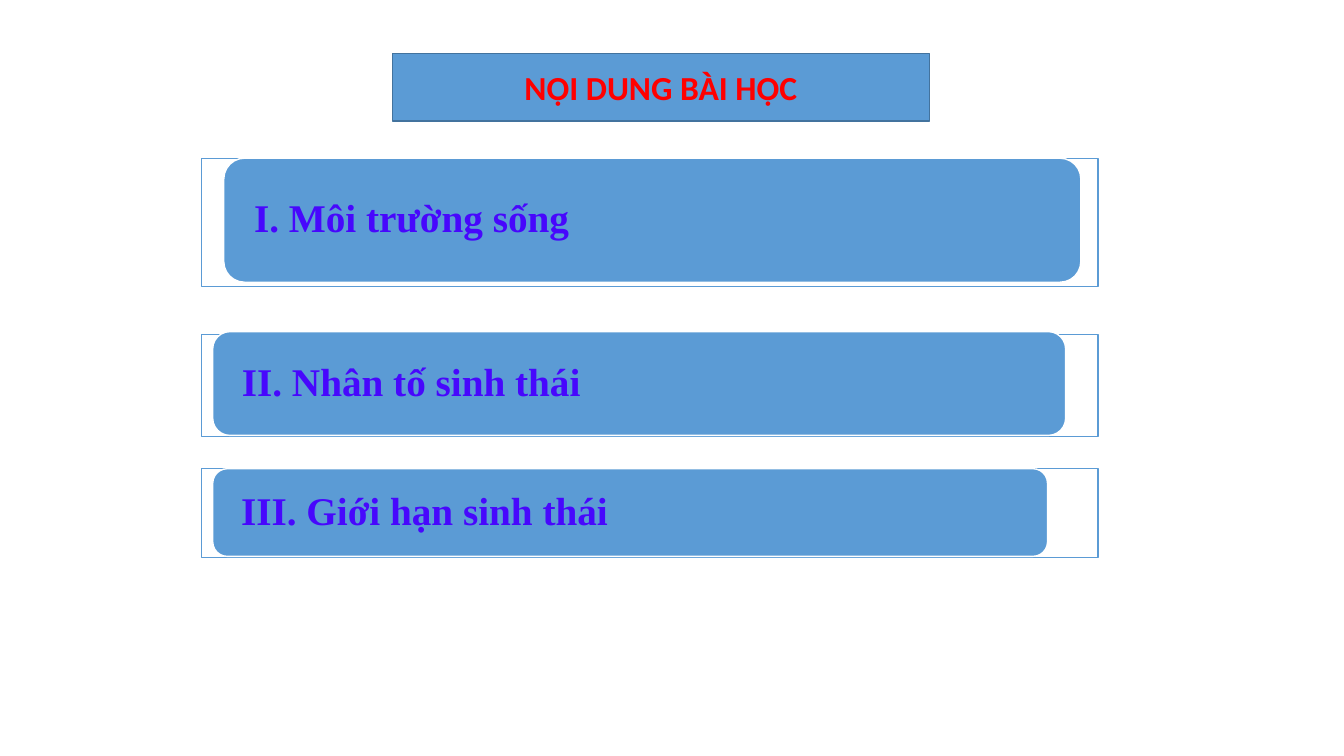
from pptx import Presentation
from pptx.dml.color import RGBColor
from pptx.enum.shapes import MSO_SHAPE
from pptx.enum.text import MSO_ANCHOR, MSO_AUTO_SIZE, PP_ALIGN
from pptx.util import Inches, Pt

RECTANGLE, ROUNDED = MSO_SHAPE.RECTANGLE, MSO_SHAPE.ROUNDED_RECTANGLE
MIDDLE, NO_FIT = MSO_ANCHOR.MIDDLE, MSO_AUTO_SIZE.NONE
LEFT, CENTER = PP_ALIGN.LEFT, PP_ALIGN.CENTER

COLORS = {"blue": "5B9BD5", "edge": "43739E", "white": "FFFFFF",
          "title": "FF0000", "topic": "4707FD"}
TITLE_FONT = {"name": "Calibri", "size": Pt(24), "bold": True}
TOPIC_FONT = {"name": "Times New Roman", "size": Pt(28), "bold": True}


def paint(shape, fill, line):
    shape.fill.solid()
    shape.fill.fore_color.rgb = RGBColor.from_string(COLORS[fill])
    shape.line.color.rgb = RGBColor.from_string(COLORS[line])
    shape.line.width = Pt(1)


def write(shape, text, font_format, color, alignment, inset):
    frame = shape.text_frame
    frame.text = text
    frame.word_wrap = True
    frame.auto_size = NO_FIT
    frame.vertical_anchor = MIDDLE
    frame.margin_left = frame.margin_right = Inches(inset)
    frame.margin_top = frame.margin_bottom = 0
    paragraph = frame.paragraphs[0]
    paragraph.alignment = alignment
    paragraph.line_spacing = 0.9
    paragraph.space_before = Pt(0)
    for name, value in font_format.items():
        setattr(paragraph.font, name, value)
    paragraph.font.color.rgb = RGBColor.from_string(COLORS[color])


presentation = Presentation()
presentation.slide_width = Inches(13.33)
presentation.slide_height = Inches(7.5)
slide = presentation.slides.add_slide(presentation.slide_layouts[5])

# Title banner
title = slide.shapes.title
title.left, title.top, title.width, title.height = map(Inches, (3.89, 0.53, 5.33, 0.67))
paint(title, "blue", "edge")
write(title, "NỘI DUNG BÀI HỌC", TITLE_FONT, "title", CENTER, 0.1)
title.text_frame.paragraphs[0].line_spacing = 1.0

# Lesson topics: frame top and height, then the bar on it
FRAME_LEFT, FRAME_WIDTH = 2, 8.89
topics = [
    ("I. Môi trường sống", 1.57, 1.27, (2.22, 1.57, 8.5, 1.23)),
    ("II. Nhân tố sinh thái", 3.32, 1.01, (2.11, 3.29, 8.46, 1.03)),
    ("III. Giới hạn sinh thái", 4.65, 0.88, (2.11, 4.65, 8.28, 0.87)),
]
for text, top, height, bar_box in topics:
    frame_box = (FRAME_LEFT, top, FRAME_WIDTH, height)
    frame = slide.shapes.add_shape(RECTANGLE, *map(Inches, frame_box))
    bar = slide.shapes.add_shape(ROUNDED, *map(Inches, bar_box))
    paint(frame, "white", "blue")
    paint(bar, "blue", "white")
    for shape in (frame, bar):
        shape.shadow.inherit = False
    write(bar, text, TOPIC_FONT, "topic", LEFT, 0.24)

presentation.save("out.pptx")
